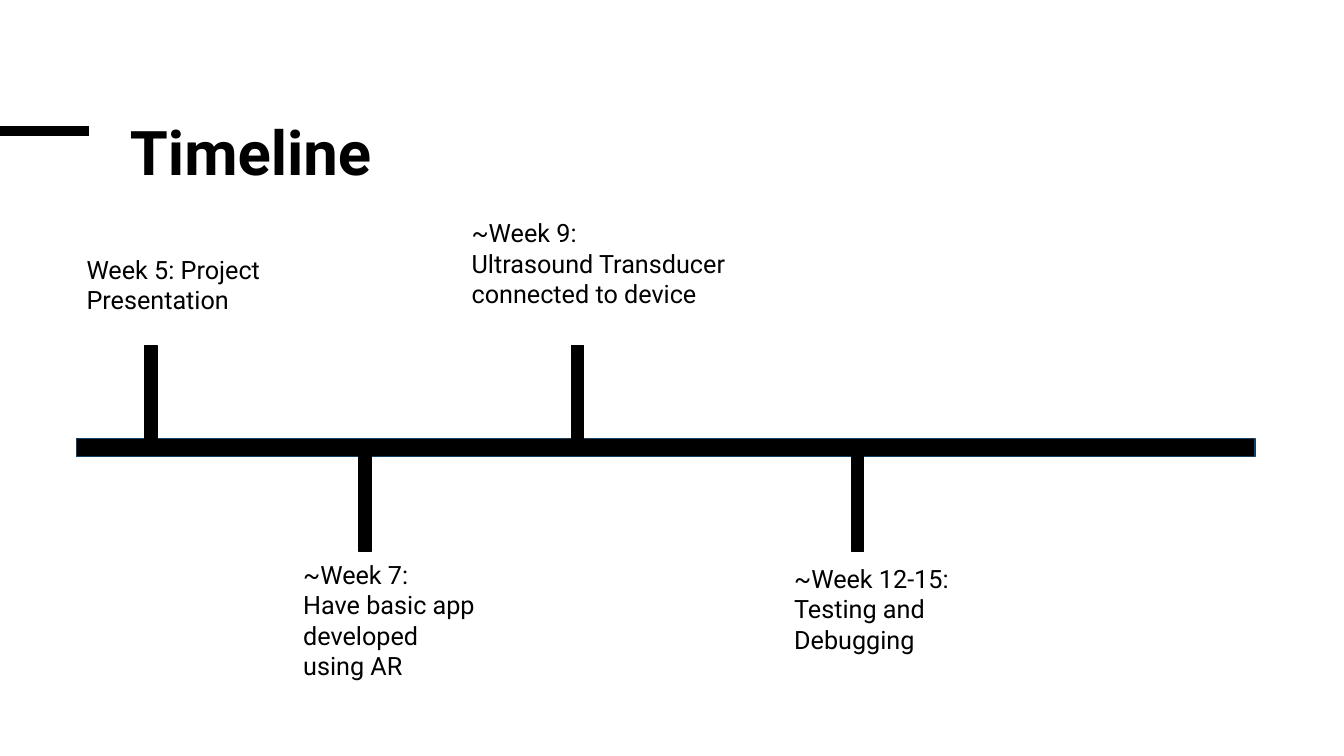
"""Build the project timeline slide."""
from dataclasses import dataclass

from lxml import etree
from pptx import Presentation
from pptx.dml.color import RGBColor
from pptx.enum.shapes import MSO_CONNECTOR, MSO_SHAPE
from pptx.enum.text import MSO_ANCHOR, MSO_AUTO_SIZE, PP_ALIGN
from pptx.oxml.ns import qn
from pptx.util import Pt

STRAIGHT = MSO_CONNECTOR.STRAIGHT
RECTANGLE = MSO_SHAPE.RECTANGLE
TOP = MSO_ANCHOR.TOP
LEFT = PP_ALIGN.LEFT
FIT_SHAPE = MSO_AUTO_SIZE.SHAPE_TO_FIT_TEXT
FIXED = MSO_AUTO_SIZE.NONE


@dataclass(frozen=True)
class Theme:
    """Hold the colours, font and sizes of the deck."""
    ink: RGBColor = RGBColor(0x00, 0x00, 0x00)
    paper: RGBColor = RGBColor(0xFF, 0xFF, 0xFF)
    axis_edge: RGBColor = RGBColor(0x12, 0x41, 0x65)
    font: str = "Roboto"
    title_size: float = 44
    label_size: float = 18
    accent_width: float = 6.75
    edge_width: float = 1


class TimelineSlide:
    """Draw the elements of the timeline on one slide."""

    def __init__(self, slide, theme):
        self.slide = slide
        self.theme = theme
        background = slide.background.fill
        background.solid()
        background.fore_color.rgb = theme.paper

    def accent(self, length, y):
        """Draw the heavy line that enters from the left edge."""
        line = self.slide.shapes.add_connector(STRAIGHT, Pt(0), Pt(y), Pt(length), Pt(y))
        line.line.color.rgb = self.theme.ink
        line.line.width = Pt(self.theme.accent_width)
        etree.SubElement(line._element.spPr, qn("a:effectLst"))

    def bar(self, x, y, width, height, edge):
        """Draw a filled bar with a thin edge."""
        bar = self.slide.shapes.add_shape(RECTANGLE, Pt(x), Pt(y), Pt(width), Pt(height))
        bar.shadow.inherit = False
        bar.fill.solid()
        bar.fill.fore_color.rgb = self.theme.ink
        bar.line.color.rgb = edge
        bar.line.width = Pt(self.theme.edge_width)

    def text(self, x, y, width, height, lines, size, bold=False, spacing=1.0, fit=FIT_SHAPE):
        """Write one paragraph per line in a wrapping box."""
        box = self.slide.shapes.add_textbox(Pt(x), Pt(y), Pt(width), Pt(height))
        frame = box.text_frame
        frame.word_wrap = True
        frame.auto_size = fit
        frame.vertical_anchor = TOP
        for index, line in enumerate(lines):
            paragraph = frame.add_paragraph() if index else frame.paragraphs[0]
            paragraph.alignment = LEFT
            paragraph.line_spacing = spacing
            run = paragraph.add_run()
            run.text = line
            run.font.name = self.theme.font
            run.font.size = Pt(size)
            run.font.bold = bold
            run.font.color.rgb = self.theme.ink

    def title(self, wording):
        """Write the slide title."""
        self.text(85.7, 85.7, 781.2, 102.2, [wording], self.theme.title_size,
                  bold=True, spacing=0.85, fit=FIXED)

    def milestone(self, tick_x, tick_y, label_box, lines):
        """Draw a tick on the axis with its label."""
        self.bar(tick_x, tick_y, TICK_WIDTH, TICK_HEIGHT, self.theme.ink)
        self.text(*label_box, lines, self.theme.label_size)


TICK_WIDTH, TICK_HEIGHT = 8.6, 69.1
ABOVE, BELOW = 246.6, 324.7
MILESTONES = [
    (103.7, ABOVE, (54.7, 177.8, 144.7, 72.7), ["Week 5: Project Presentation"]),
    (256.3, BELOW, (209.5, 396, 141.8, 94.3),
     ["~Week 7:", "Have basic app developed using AR"]),
    (408.2, ABOVE, (329.8, 151.9, 196.6, 94.3),
     ["~Week 9:", "Ultrasound Transducer connected to device"]),
    (608.4, BELOW, (560.2, 398.9, 172.8, 72.7),
     ["~Week 12-15:", "Testing and Debugging"]),
]


def main():
    """Build and save the deck."""
    deck = Presentation()
    deck.slide_width, deck.slide_height = Pt(960), Pt(540)
    theme = Theme()
    timeline = TimelineSlide(deck.slides.add_slide(deck.slide_layouts[6]), theme)
    timeline.accent(63.6, 93.6)
    timeline.title("Timeline")
    timeline.bar(54.7, 313.2, 841.7, 13, theme.axis_edge)
    for milestone in MILESTONES:
        timeline.milestone(*milestone)
    deck.save("out.pptx")


if __name__ == "__main__":
    main()
